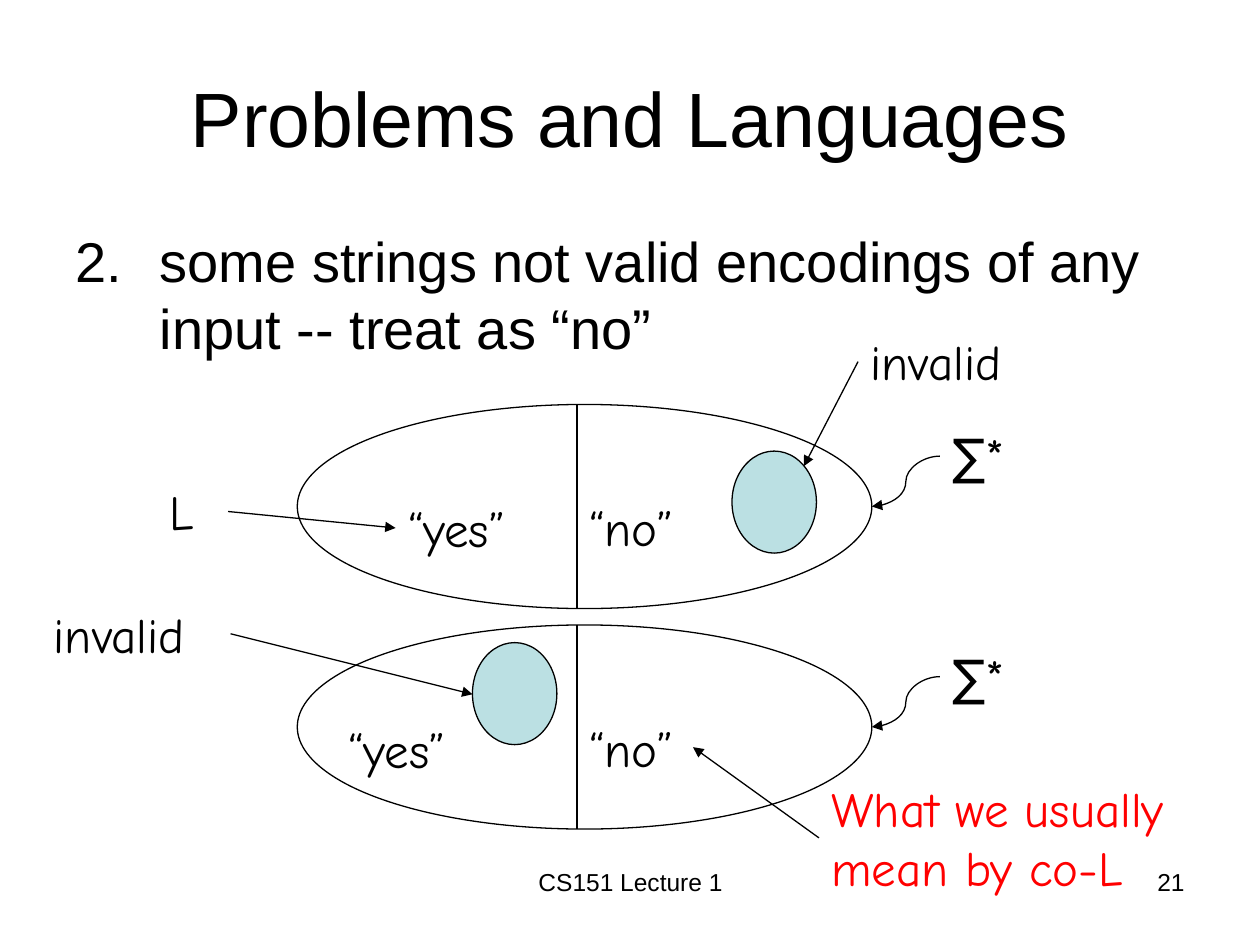
from lxml.etree import SubElement
from pptx import Presentation
from pptx.dml.color import RGBColor
from pptx.enum.shapes import MSO_CONNECTOR as Connector, MSO_SHAPE as Shape
from pptx.enum.text import MSO_ANCHOR as Anchor, PP_ALIGN as Align
from pptx.oxml.ns import qn
from pptx.util import Inches, Pt

COLORS = {"ink": "000000", "note": "FF0000", "invalid": "BBE0E3"}
WIDTH, HEIGHT = Inches(10), Inches(7.5)
SANS, HAND = "Arial", "Comic Neue"
LABEL_HEIGHT = 7.6
OVAL_LEFT, OVAL_WIDTH, OVAL_HEIGHT = 23.6, 45.6, 21.6
DIVIDER = 45.8


def color(name):
    return RGBColor.from_string(COLORS[name])


def across(share):
    """Length as a percentage of the slide's width."""
    return round(WIDTH * share / 100)


def down(share):
    """Length as a percentage of the slide's height."""
    return round(HEIGHT * share / 100)


def add_text(page, text, left, top, width, height, size=28, font=HAND,
             ink="ink", align=Align.LEFT, anchor=Anchor.TOP, wrap=True):
    box = page.shapes.add_textbox(across(left), down(top),
                                  across(width), down(height))
    frame = box.text_frame
    frame.word_wrap = wrap
    frame.vertical_anchor = anchor
    para = frame.paragraphs[0]
    para.text = text
    para.alignment = align
    para.font.name = font
    para.font.size = Pt(size)
    para.font.color.rgb = color(ink)
    return para


def number_item(para, start, indent):
    """Give a paragraph an automatic number and a hanging indent."""
    props = para._p.get_or_add_pPr()
    props.set("marL", str(indent))
    props.set("indent", str(-indent))
    para.space_before = Pt(4)
    number = props.makeelement(qn("a:buAutoNum"),
                               {"type": "arabicPeriod", "startAt": str(start)})
    props.find(qn("a:spcBef")).addnext(number)


def add_oval(page, left, top, width, height, fill=None):
    oval = page.shapes.add_shape(Shape.OVAL, across(left), down(top),
                                 across(width), down(height))
    oval.shadow.inherit = False
    if fill:
        oval.fill.solid()
        oval.fill.fore_color.rgb = color(fill)
    else:
        oval.fill.background()
    oval.line.color.rgb = color("ink")
    oval.line.width = Pt(0.75)


def add_line(page, start, end, kind=Connector.STRAIGHT, arrow=True):
    line = page.shapes.add_connector(kind, across(start[0]), down(start[1]),
                                     across(end[0]), down(end[1]))
    line.line.color.rgb = color("ink")
    line.line.width = Pt(0.75)
    if arrow:
        SubElement(line.line._get_or_add_ln(), qn("a:tailEnd"), type="triangle")
    SubElement(line._element.spPr, qn("a:effectLst"))


def add_domain(page, top, yes_left, invalid_left, invalid_drop):
    """All strings, split into yes and no, with the invalid ones marked."""
    right = OVAL_LEFT + OVAL_WIDTH
    add_oval(page, OVAL_LEFT, top, OVAL_WIDTH, OVAL_HEIGHT)
    add_line(page, (DIVIDER, top), (DIVIDER, top + OVAL_HEIGHT), arrow=False)
    add_text(page, "∑*", 74.6, top + 1.6, 7, LABEL_HEIGHT, wrap=False)
    add_line(page, (74.6, top + 5.47), (right, top + OVAL_HEIGHT / 2),
             Connector.CURVE)
    add_text(page, "“yes”", yes_left, top + 9.33, 20, LABEL_HEIGHT)
    add_text(page, "“no”", DIVIDER, top + 9.2, 9.1, LABEL_HEIGHT, wrap=False)
    add_oval(page, invalid_left, top + invalid_drop, 6.7, 10.8, "invalid")


def main():
    deck = Presentation()
    deck.slide_width, deck.slide_height = WIDTH, HEIGHT
    page = deck.slides.add_slide(deck.slide_layouts[6])

    # Title and numbered statement
    add_text(page, "Problems and Languages", 5, 4, 90, 16.67, 44, SANS,
             align=Align.CENTER, anchor=Anchor.MIDDLE)
    statement = add_text(
        page, "some strings not valid encodings of any input -- treat as “no”",
        5, 23.33, 90, 66, 32, SANS)
    number_item(statement, 2, Inches(0.67))

    # Language L: invalid strings count as "no"
    add_domain(page, 42.8, 31.4, 58.1, 4.93)
    add_text(page, "L", 12.5, 50.27, 5.6, LABEL_HEIGHT)
    add_line(page, (18.1, 54.13), (31.4, 55.87))
    add_text(page, "invalid", 68.1, 34.4, 21.1, LABEL_HEIGHT)
    add_line(page, (68.1, 38.27), (63.8, 49.33))

    # Complement: invalid strings count as "yes"
    add_domain(page, 66.13, 26.7, 37.5, 1.87)
    add_text(page, "invalid", 3.3, 63.33, 15, LABEL_HEIGHT)
    add_line(page, (18.3, 67.07), (37.5, 73.47))
    add_text(page, "What we usually mean by co-L", 65, 81.73, 32.5, 13.73,
             ink="note")
    add_line(page, (65, 88.67), (55, 79.07))

    # Footer and page number
    add_text(page, "CS151 Lecture 1", 34.2, 91.07, 31.7, 6.93, 14, SANS,
             align=Align.CENTER)
    add_text(page, "21", 71.7, 91.07, 23.3, 6.93, 14, SANS, align=Align.RIGHT)

    deck.save("out.pptx")


if __name__ == "__main__":
    main()
